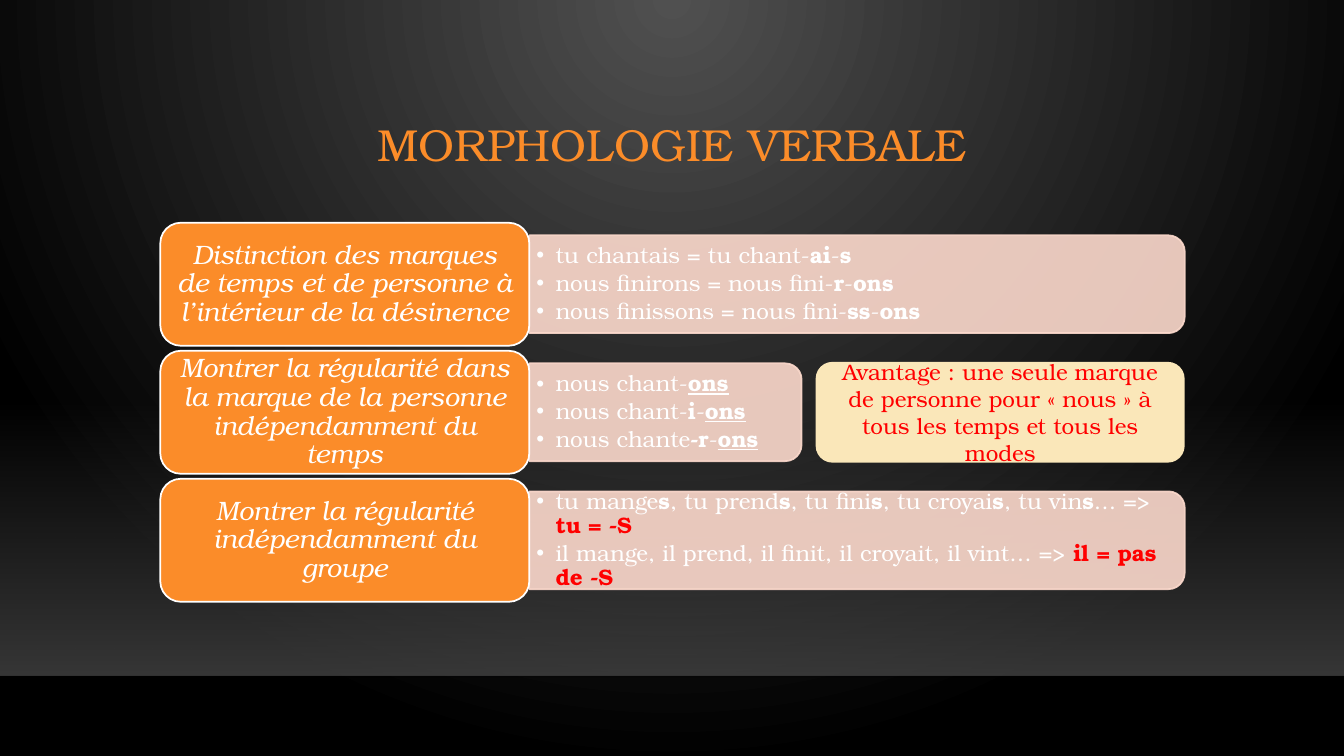
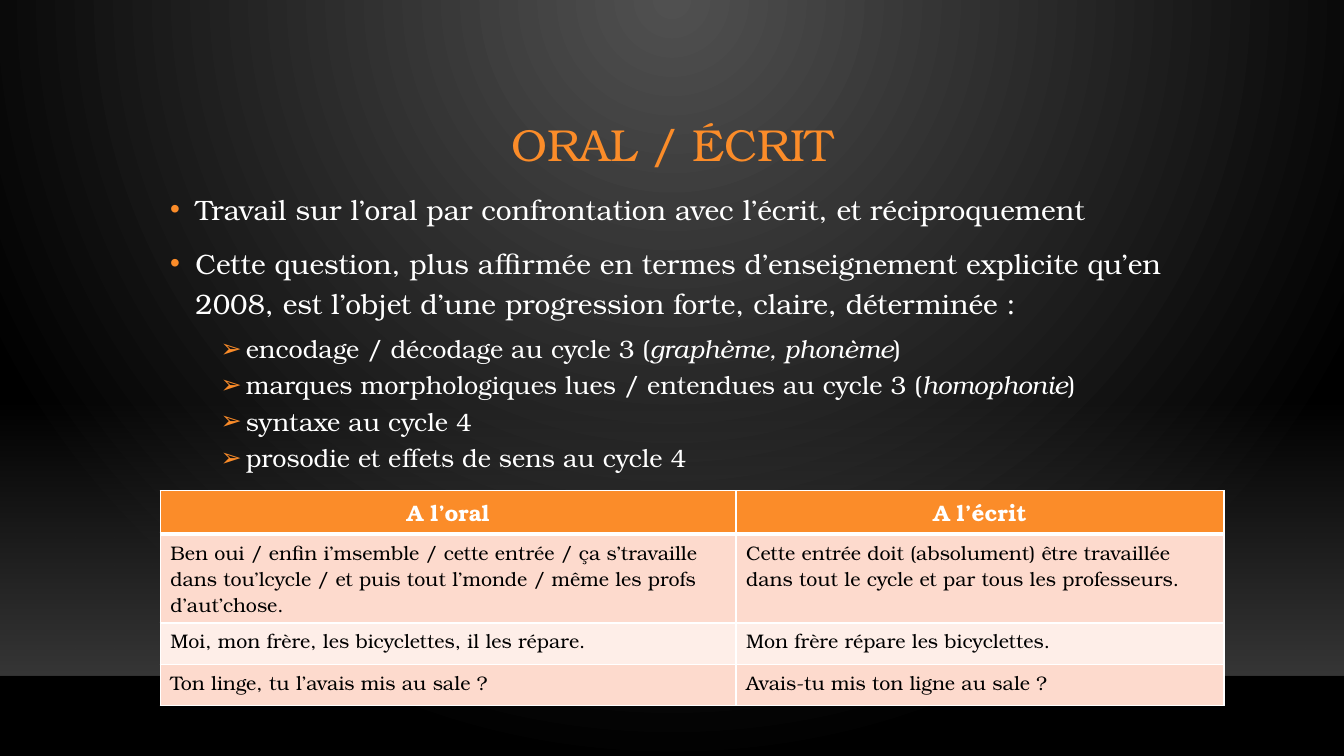
"""Build two slides on French verb morphology and on spoken versus written language."""
from dataclasses import dataclass, field
from typing import Any

from lxml.etree import SubElement
from pptx import Presentation
from pptx.dml.color import RGBColor
from pptx.enum.shapes import MSO_CONNECTOR, MSO_SHAPE as Preset
from pptx.enum.text import MSO_ANCHOR as Anchor, MSO_AUTO_SIZE as AutoSize, PP_ALIGN as Align
from pptx.oxml import parse_xml
from pptx.oxml.ns import nsdecls, qn
from pptx.util import Inches, Pt


@dataclass(frozen=True)
class Theme:
    font: str = "TeX Gyre Bonum"
    bullet_font: str = "Arial"
    accent: str = "FB8C29"
    panel: str = "FDDACD"
    pale: str = "FEEEE8"
    cream: str = "FAE7B9"
    glow: str = "505050"
    band: str = "454545"
    edge: str = "000001"
    white: str = "FFFFFF"
    black: str = "000000"
    red: str = "FF0000"
    title_size: int = 32
    body_size: int = 20
    label_size: int = 19
    detail_size: int = 18
    small_size: int = 16
    cell_size: int = 14


THEME = Theme()
BOLD = {"bold": True}
ITALIC = {"italic": True}
ENDING = {"bold": True, "underline": True}
RULE = {"bold": True, "color": THEME.red}


@dataclass(frozen=True)
class Run:
    text: str
    style: dict[str, Any] = field(default_factory=dict)


@dataclass(frozen=True)
class Bullet:
    character: str
    color: str
    left: float
    hanging: float


@dataclass(frozen=True)
class Line:
    runs: list[Run]
    style: dict[str, Any]
    layout: dict[str, Any] = field(default_factory=dict)
    bullet: Bullet | None = None


@dataclass(frozen=True)
class Topic:
    label: str
    examples: list[list[Run]]
    panel_width: float


LEFT, WIDTH = 1.59, 10.16
TOPIC_TOP, TOPIC_STEP = 2.21, 1.27
LABEL_WIDTH, LABEL_HEIGHT = 3.66, 1.22
PANEL_LEFT, PANEL_HEIGHT = LEFT + LABEL_WIDTH, 0.97

TOPICS = [
    Topic("Distinction des marques de temps et de personne à l’intérieur de la désinence", [
        [Run("tu chantais = tu chant-"), Run("ai", BOLD), Run("-"), Run("s", BOLD)],
        [Run("nous finirons = nous fini-"), Run("r", BOLD), Run("-"), Run("ons", BOLD)],
        [Run("nous finissons = nous fini-"), Run("ss", BOLD), Run("-"), Run("ons", BOLD)],
    ], 6.5),
    Topic("Montrer la régularité dans la marque de la personne indépendamment du temps", [
        [Run("nous chant-"), Run("ons", ENDING)],
        [Run("nous chant-"), Run("i", BOLD), Run("-"), Run("ons", ENDING)],
        [Run("nous chante"), Run("-r", BOLD), Run("-"), Run("ons", ENDING)],
    ], 2.7),
    Topic("Montrer la régularité indépendamment du groupe", [
        [Run("tu mange"), Run("s", BOLD), Run(", tu prend"), Run("s", BOLD),
         Run(", tu fini"), Run("s", BOLD), Run(", tu croyai"), Run("s", BOLD),
         Run(", tu vin"), Run("s", BOLD), Run("… => "), Run("tu = -S", RULE)],
        [Run("il mange, il prend, il finit, il croyait, il vint… => "),
         Run("il = pas de -S", RULE)],
    ], 6.5),
]
ADVANTAGE = "Avantage : une seule marque de personne pour « nous » à tous les temps et tous les modes"

POINTS = [
    "Travail sur l’oral par confrontation avec l’écrit, et réciproquement",
    "Cette question, plus affirmée en termes d’enseignement explicite qu’en 2008, "
    "est l’objet d’une progression forte, claire, déterminée :",
]
STEPS = [
    [Run("encodage / décodage au cycle 3 ("), Run("graphème, phonème", ITALIC), Run(")")],
    [Run("marques morphologiques lues / entendues au cycle 3 ("),
     Run("homophonie", ITALIC), Run(")")],
    [Run("syntaxe au cycle 4")],
    [Run("prosodie et effets de sens au cycle 4")],
]
COMPARISON = [
    ("A l’oral", "A l’écrit"),
    ("Ben oui / enfin i’msemble / cette entrée / ça s’travaille dans tou’lcycle / "
     "et puis tout l’monde / même les profs d’aut’chose.",
     "Cette entrée doit (absolument) être travaillée dans tout le cycle et par tous les professeurs."),
    ("Moi, mon frère, les bicyclettes, il les répare.", "Mon frère répare les bicyclettes."),
    ("Ton linge, tu l’avais mis au sale ?", "Avais-tu mis ton ligne au sale ?"),
]
COLUMN_WIDTHS = (5.71, 4.84)
ROW_HEIGHTS = (0.43, 0.88, 0.41, 0.41)


def rgb(color: str) -> RGBColor:
    return RGBColor.from_string(color)


def box(left: float, top: float, width: float, height: float) -> tuple:
    return tuple(Inches(length) for length in (left, top, width, height))


def set_all(target: Any, values: dict[str, Any]) -> None:
    for name, value in values.items():
        setattr(target, name, value)


def text_style(size: int, color: str, **extra: Any) -> dict[str, Any]:
    return {"size": Pt(size), "color": color, "name": THEME.font, **extra}


def set_alpha(element: Any, percent: int) -> None:
    for color in element.iter(qn("a:srgbClr")):
        SubElement(color, qn("a:alpha"), val=str(percent * 1000))


def add_bullet(paragraph: Any, bullet: Bullet) -> None:
    properties = paragraph._p.get_or_add_pPr()
    properties.set("marL", str(Inches(bullet.left)))
    properties.set("indent", str(-Inches(bullet.hanging)))
    color = SubElement(properties, qn("a:buClr"))
    SubElement(color, qn("a:srgbClr"), val=bullet.color)
    SubElement(properties, qn("a:buFont"), typeface=THEME.bullet_font)
    SubElement(properties, qn("a:buChar"), char=bullet.character)


def add_run(paragraph: Any, text: str, style: dict[str, Any]) -> None:
    run = paragraph.add_run()
    run.text = text
    run.font.color.rgb = rgb(style["color"])
    set_all(run.font, {name: value for name, value in style.items() if name != "color"})


def write(frame: Any, lines: list[Line], margins: tuple[float, float] = (0.1, 0.05),
          anchor: Anchor = Anchor.MIDDLE) -> None:
    across, down = (Inches(margin) for margin in margins)
    set_all(frame, {"word_wrap": True, "auto_size": AutoSize.NONE, "vertical_anchor": anchor,
                    "margin_left": across, "margin_right": across,
                    "margin_top": down, "margin_bottom": down})
    for index, line in enumerate(lines):
        paragraph = frame.add_paragraph() if index else frame.paragraphs[0]
        if line.bullet:
            add_bullet(paragraph, line.bullet)
        set_all(paragraph, line.layout)
        for part in line.runs:
            add_run(paragraph, part.text, {**line.style, **part.style})


def add_block(slide: Any, preset: Preset, place: tuple, fill: str, outline: str | None = None) -> Any:
    shape = slide.shapes.add_shape(preset, *place)
    shape.shadow.inherit = False
    shape.fill.solid()
    shape.fill.fore_color.rgb = rgb(fill)
    if outline:
        shape.line.color.rgb = rgb(outline)
        shape.line.width = Pt(1.25)
    else:
        shape.line.fill.background()
    return shape


def set_gradient(fill: Any, colors: tuple[str, str]) -> None:
    fill.gradient()
    for stop, color, position in zip(fill.gradient_stops, colors, (0, 1)):
        stop.color.rgb = rgb(color)
        stop.position = position


def set_background(presentation: Any) -> None:
    master = presentation.slide_master
    set_gradient(master.background.fill, (THEME.glow, THEME.black))
    gradient = next(master.element.iter(qn("a:gradFill")))
    gradient.remove(gradient.find(qn("a:lin")))
    gradient.append(parse_xml(
        f'<a:path {nsdecls("a")} path="circle">'
        '<a:fillToRect l="43000" r="43000" b="100000"/></a:path>'))


def add_floor(slide: Any) -> None:
    band = add_block(slide, Preset.RECTANGLE, box(0, 3.96, 13.33, 2.74), THEME.band)
    set_gradient(band.fill, (THEME.band, THEME.band))
    band.fill.gradient_angle = 270
    for stop, alpha in zip(band._element.iter(qn("a:gs")), (0, 80)):
        set_alpha(stop, alpha)
    edge = slide.shapes.add_connector(
        MSO_CONNECTOR.STRAIGHT, Inches(0), Inches(6.71), Inches(13.33), Inches(6.71))
    edge.line.color.rgb = rgb(THEME.edge)
    edge.line.width = Pt(1)
    properties = edge._element.spPr
    set_alpha(properties, 20)
    SubElement(properties, qn("a:effectLst"))


def add_titled_slide(presentation: Any, text: str) -> Any:
    slide = presentation.slides.add_slide(presentation.slide_layouts[5])
    add_floor(slide)
    title = slide.shapes.title
    title.left, title.top, title.width, title.height = box(LEFT, 0.88, WIDTH, 1.15)
    write(title.text_frame, [Line([Run(text)], text_style(THEME.title_size, THEME.accent),
                                  {"alignment": Align.CENTER, "line_spacing": 0.9})])
    return slide


def add_topic(slide: Any, topic: Topic, top: float) -> None:
    middle = top + LABEL_HEIGHT / 2
    center = PANEL_LEFT + topic.panel_width / 2
    panel = add_block(slide, Preset.ROUND_2_SAME_RECTANGLE,
                      box(center - PANEL_HEIGHT / 2, middle - topic.panel_width / 2,
                          PANEL_HEIGHT, topic.panel_width), THEME.panel, THEME.panel)
    panel.rotation = 90
    set_alpha(panel._element.spPr, 90)
    examples = slide.shapes.add_textbox(
        *box(PANEL_LEFT, middle - 0.44, topic.panel_width - 0.04, 0.88))
    bullet = Bullet("•", THEME.white, 0.19, 0.19)
    write(examples.text_frame,
          [Line(runs, text_style(THEME.small_size, THEME.white),
                {"line_spacing": 0.9, "space_after": Pt(2.4)}, bullet)
           for runs in topic.examples], (0.07, 0.03))
    label = add_block(slide, Preset.ROUNDED_RECTANGLE,
                      box(LEFT, top, LABEL_WIDTH, LABEL_HEIGHT), THEME.accent, THEME.white)
    write(label.text_frame,
          [Line([Run(topic.label)], text_style(THEME.label_size, THEME.white, italic=True),
                {"alignment": Align.CENTER, "line_spacing": 0.9})], (0.08, 0.04))


def build_morphology(presentation: Any) -> None:
    slide = add_titled_slide(presentation, "MORPHOLOGIE VERBALE")
    for index, topic in enumerate(TOPICS):
        add_topic(slide, topic, TOPIC_TOP + index * TOPIC_STEP)
    note = add_block(slide, Preset.ROUNDED_RECTANGLE, box(8.09, 3.59, 3.66, 1), THEME.cream)
    write(note.text_frame, [Line([Run(ADVANTAGE)], text_style(THEME.small_size, THEME.red),
                                 {"alignment": Align.CENTER})])


def set_borders(cell: Any, widths: dict[str, int]) -> None:
    properties = cell._tc.get_or_add_tcPr()
    for index, (side, width) in enumerate(widths.items()):
        properties.insert(index, parse_xml(
            f'<a:ln{side} {nsdecls("a")} w="{Pt(width)}"><a:solidFill>'
            f'<a:srgbClr val="{THEME.white}"/></a:solidFill></a:ln{side}>'))


def add_comparison(slide: Any) -> None:
    table = slide.shapes.add_table(
        len(ROW_HEIGHTS), len(COLUMN_WIDTHS),
        *box(LEFT, 4.87, sum(COLUMN_WIDTHS), sum(ROW_HEIGHTS))).table
    for column, width in zip(table.columns, COLUMN_WIDTHS):
        column.width = Inches(width)
    header = text_style(THEME.small_size, THEME.white, bold=True)
    body = text_style(THEME.cell_size, THEME.black, bold=False)
    fills = (THEME.accent, THEME.panel, THEME.pale, THEME.panel)
    for index, (row, height, texts) in enumerate(zip(table.rows, ROW_HEIGHTS, COMPARISON)):
        row.height = Inches(height)
        for cell, text in zip(row.cells, texts):
            cell.fill.solid()
            cell.fill.fore_color.rgb = rgb(fills[index])
            set_borders(cell, {"L": 1, "R": 1, "T": 3 if index == 1 else 1,
                               "B": 1 if index else 3})
            paragraph = cell.text_frame.paragraphs[0]
            paragraph.alignment = Align.LEFT if index else Align.CENTER
            add_run(paragraph, text, body if index else header)


def build_spoken_written(presentation: Any) -> None:
    slide = add_titled_slide(presentation, "ORAL / ÉCRIT")
    point, step = Bullet("•", THEME.accent, 0.25, 0.25), Bullet("➢", THEME.accent, 0.75, 0.25)
    lines = [Line([Run(text)], text_style(THEME.body_size, THEME.white),
                  {"line_spacing": 1.2, "space_before": Pt(10 if index else 0)}, point)
             for index, text in enumerate(POINTS)]
    lines += [Line(runs, text_style(THEME.detail_size, THEME.white),
                   {"level": 1, "line_spacing": 1.2, "space_before": Pt(0 if index else 5)}, step)
              for index, runs in enumerate(STEPS)]
    body = slide.shapes.add_textbox(*box(LEFT, 1.79, WIDTH, 3.77))
    write(body.text_frame, lines, anchor=Anchor.TOP)
    add_comparison(slide)


def main() -> None:
    presentation = Presentation()
    presentation.slide_width, presentation.slide_height = Inches(13.33), Inches(7.5)
    set_background(presentation)
    build_morphology(presentation)
    build_spoken_written(presentation)
    presentation.save("out.pptx")


if __name__ == "__main__":
    main()
